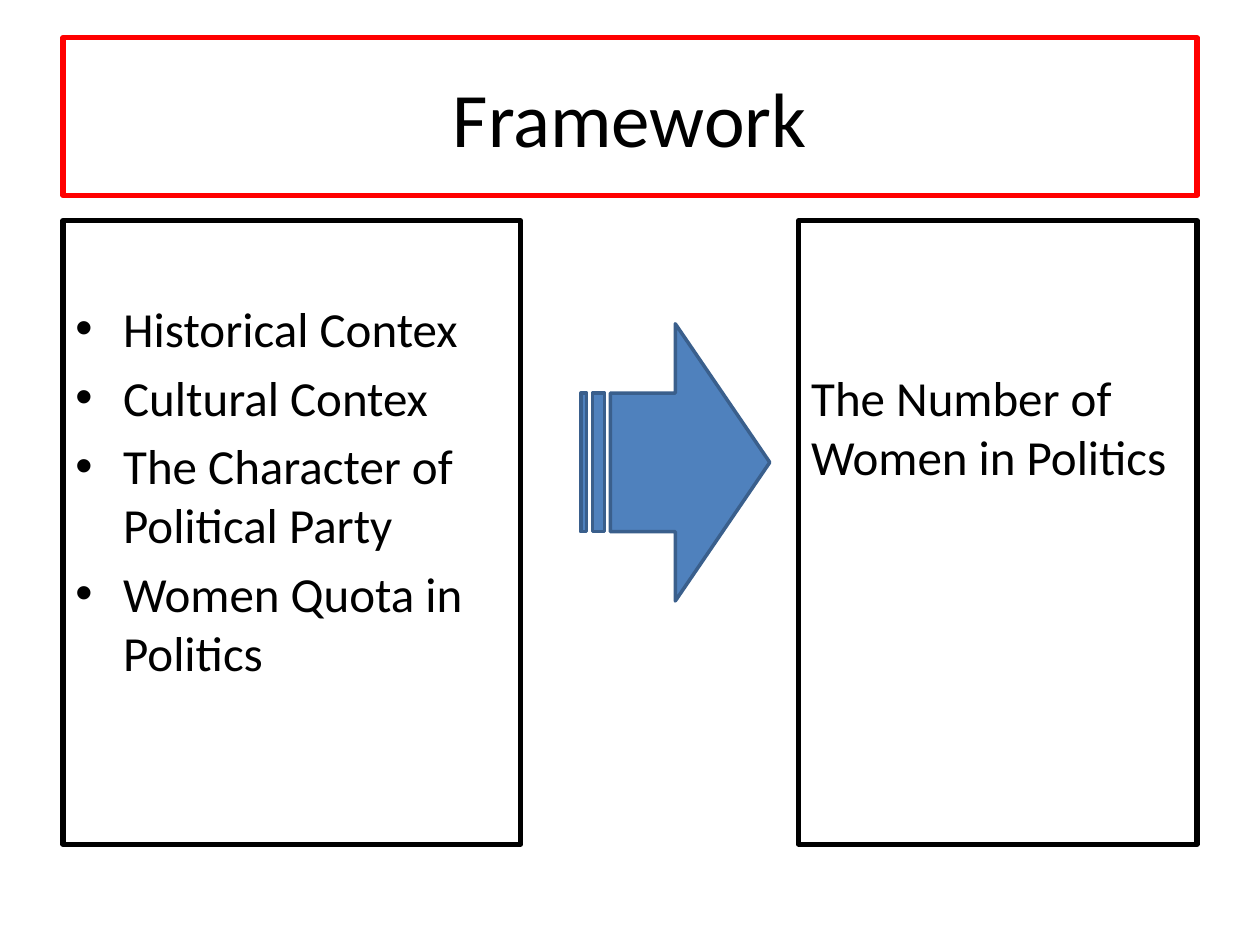
from lxml import etree
from pptx import Presentation
from pptx.dml.color import RGBColor
from pptx.enum.shapes import MSO_SHAPE
from pptx.enum.text import MSO_ANCHOR, PP_ALIGN
from pptx.oxml.ns import qn
from pptx.util import Inches, Pt

ARROW = MSO_SHAPE.STRIPED_RIGHT_ARROW
MIDDLE, TOP = MSO_ANCHOR.MIDDLE, MSO_ANCHOR.TOP
CENTER, LEFT = PP_ALIGN.CENTER, PP_ALIGN.LEFT


def rgb(color):
    return RGBColor.from_string(color)


def format_box(sp, line, size, align, anchor):
    """Outline a box and format all of its text."""
    sp.line.color.rgb = rgb(line)
    sp.line.width = Pt(3)
    tf = sp.text_frame
    tf.word_wrap = True
    tf.vertical_anchor = anchor
    for p in tf.paragraphs:
        p.alignment = align
        for r in p.runs:
            r.font.name = "Calibri"
            r.font.size = Pt(size)
            r.font.color.rgb = rgb("000000")


prs = Presentation()
prs.slide_width, prs.slide_height = Inches(10), Inches(7.5)
W, H = prs.slide_width, prs.slide_height
margin = int(W * 0.05)
body_top, body_height = Inches(1.75), int(H * 0.66)

s = prs.slides.add_slide(prs.slide_layouts[5])
title = s.shapes.title
title.left, title.top = margin, int(H * 0.04)
title.width, title.height = W - 2 * margin, Inches(1.25)
title.text_frame.text = "Framework"
format_box(title, "FF0000", 44, CENTER, MIDDLE)

factors = ["Historical Contex", "Cultural Contex",
           "The Character of Political Party", "Women Quota in Politics"]
outcome = ["The Number of Women in Politics"]
left_width, right_width = Inches(3.63), Inches(3.16)

# left, width, space above the text, paragraphs, bulleted
columns = [
    (margin, left_width, 0.62, factors, True),
    (W - margin - right_width, right_width, 1.17, outcome, False),
]
for left, width, inset, lines, bulleted in columns:
    sp = s.shapes.add_textbox(left, body_top, width, body_height)
    tf = sp.text_frame
    tf.text = "\n".join(lines)
    tf.margin_top = Inches(inset)
    format_box(sp, "000000", 28, LEFT, TOP)
    for i, p in enumerate(tf.paragraphs):
        p.space_before = Pt(5.6 if i else 0)
        if bulleted:
            pPr = p._p.get_or_add_pPr()
            pPr.set("marL", str(Inches(0.38)))
            pPr.set("indent", str(-Inches(0.38)))
            etree.SubElement(pPr, qn("a:buFont")).set("typeface", "Arial")
            etree.SubElement(pPr, qn("a:buChar")).set("char", "•")

arrow = s.shapes.add_shape(ARROW, Inches(4.61), Inches(2.57),
                           int(W * 0.15), Inches(2.2))
arrow.shadow.inherit = False
arrow.fill.solid()
arrow.fill.fore_color.rgb = rgb("4F81BD")
arrow.line.color.rgb = rgb("3A5F8C")
arrow.line.width = Pt(2)

prs.save("out.pptx")
